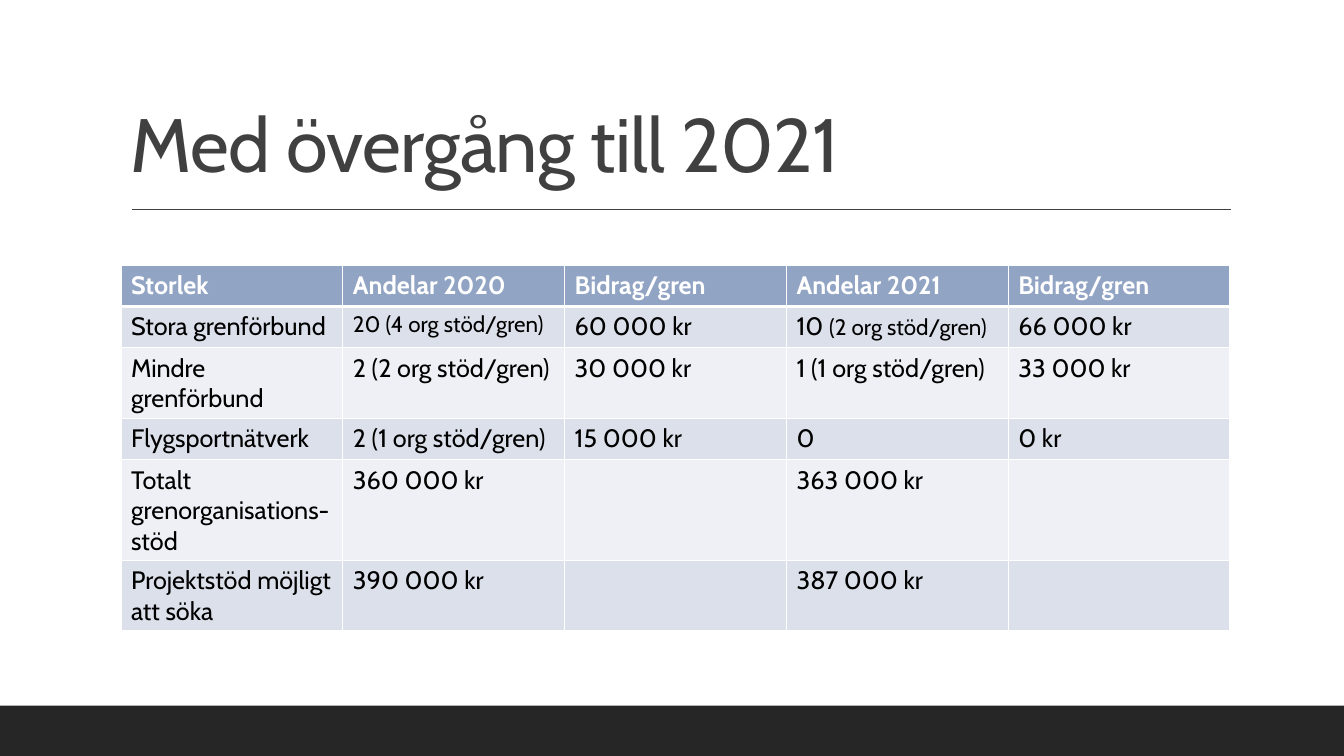
import pptx
import pptx.util
import pptx.dml.color
import pptx.enum.shapes
import pptx.enum.text
import pptx.oxml
import pptx.oxml.ns
from dataclasses import dataclass
from lxml import etree

Inches = pptx.util.Inches
Pt = pptx.util.Pt


@dataclass(frozen=True)
class Theme:
    font: str = "Cabin"
    dark: str = "262626"
    ink: str = "404040"
    text: str = "000000"
    white: str = "FFFFFF"
    head: str = "92A4C4"
    bands: tuple = ("DCE0EA", "EEF0F5")
    title: int = 54
    body: int = 18
    small: int = 16


THEME = Theme()

# A cell is a list of (text, size) runs where its size departs from the body.
ROWS = [
    ["Storlek", "Andelar 2020", "Bidrag/gren", "Andelar 2021", "Bidrag/gren"],
    ["Stora grenförbund", [("20 (4 org stöd/gren)", THEME.small)], "60 000 kr",
     [("10 ", THEME.body), ("(2 org stöd/gren)", THEME.small)], "66 000 kr"],
    ["Mindre grenförbund", "2 (2 org stöd/gren)", "30 000 kr",
     "1 (1 org stöd/gren)", "33 000 kr"],
    ["Flygsportnätverk", "2 (1 org stöd/gren)", "15 000 kr", "0", "0 kr"],
    ["Totalt grenorganisations-stöd", "360 000 kr", "", "363 000 kr", ""],
    ["Projektstöd möjligt att söka", "390 000 kr", "", "387 000 kr", ""],
]


def paint(fill, color):
    fill.solid()
    fill.fore_color.rgb = pptx.dml.color.RGBColor.from_string(color)


def style(run, size, color, bold=False):
    font = run.font
    font.name = THEME.font
    font.size = Pt(size)
    font.bold = bold
    font.color.rgb = pptx.dml.color.RGBColor.from_string(color)


def add_bar(slide):
    bar = slide.shapes.add_shape(
        pptx.enum.shapes.MSO_SHAPE.RECTANGLE,
        Inches(0), Inches(7), Inches(13.33), Inches(0.5))
    bar.shadow.inherit = False
    paint(bar.fill, THEME.dark)
    bar.line.fill.background()


def add_rule(slide):
    rule = slide.shapes.add_connector(
        pptx.enum.shapes.MSO_CONNECTOR.STRAIGHT,
        Inches(1.31), Inches(2.08), Inches(12.21), Inches(2.08))
    paint(rule.line.fill, THEME.ink)
    rule.line.width = Pt(1)
    etree.SubElement(rule._element.spPr, pptx.oxml.ns.qn("a:effectLst"))


def add_title(slide, text):
    box = slide.shapes.add_textbox(
        Inches(1.2), Inches(0.31), Inches(11), Inches(1.59))
    frame = box.text_frame
    frame.word_wrap = True
    frame.vertical_anchor = pptx.enum.text.MSO_ANCHOR.BOTTOM
    frame.text = text
    para = frame.paragraphs[0]
    para.line_spacing = 0.8
    run = para.runs[0]
    style(run, THEME.title, THEME.ink)
    run.font._element.set("spc", "-50")


def add_edges(cell, top, bottom):
    """Draw white cell borders; top and bottom are widths in points."""
    props = cell._tc.get_or_add_tcPr()
    for side, width in (("L", 1), ("R", 1), ("T", top), ("B", bottom)):
        props.append(pptx.oxml.parse_xml(
            f'<a:ln{side} {pptx.oxml.ns.nsdecls("a")} w="{Pt(width)}">'
            f'<a:solidFill><a:srgbClr val="{THEME.white}"/></a:solidFill>'
            f'</a:ln{side}>'))


def fill_cell(cell, value, row):
    head = row == 0
    add_edges(cell, top=3 if row == 1 else 1, bottom=3 if head else 1)
    paint(cell.fill, THEME.head if head else THEME.bands[(row - 1) % 2])
    if not value:
        return
    parts = [(value, THEME.body)] if isinstance(value, str) else value
    para = cell.text_frame.paragraphs[0]
    for text, size in parts:
        run = para.add_run()
        run.text = text
        style(run, size, THEME.white if head else THEME.text, head)


def add_grid(slide, rows):
    frame = slide.shapes.add_table(
        len(rows), len(rows[0]),
        Inches(1.2), Inches(2.63), Inches(11), Inches(3.62))
    table = frame.table
    for row, values in enumerate(rows):
        table.rows[row].height = Inches(0.41)
        for col, value in enumerate(values):
            fill_cell(table.cell(row, col), value, row)
    frame.height = Inches(3.62)


def main():
    deck = pptx.Presentation()
    deck.slide_width = Inches(13.33)
    deck.slide_height = Inches(7.5)
    slide = deck.slides.add_slide(deck.slide_layouts[6])
    add_bar(slide)
    add_rule(slide)
    add_title(slide, "Med övergång till 2021")
    add_grid(slide, ROWS)
    deck.save("out.pptx")


if __name__ == "__main__":
    main()
